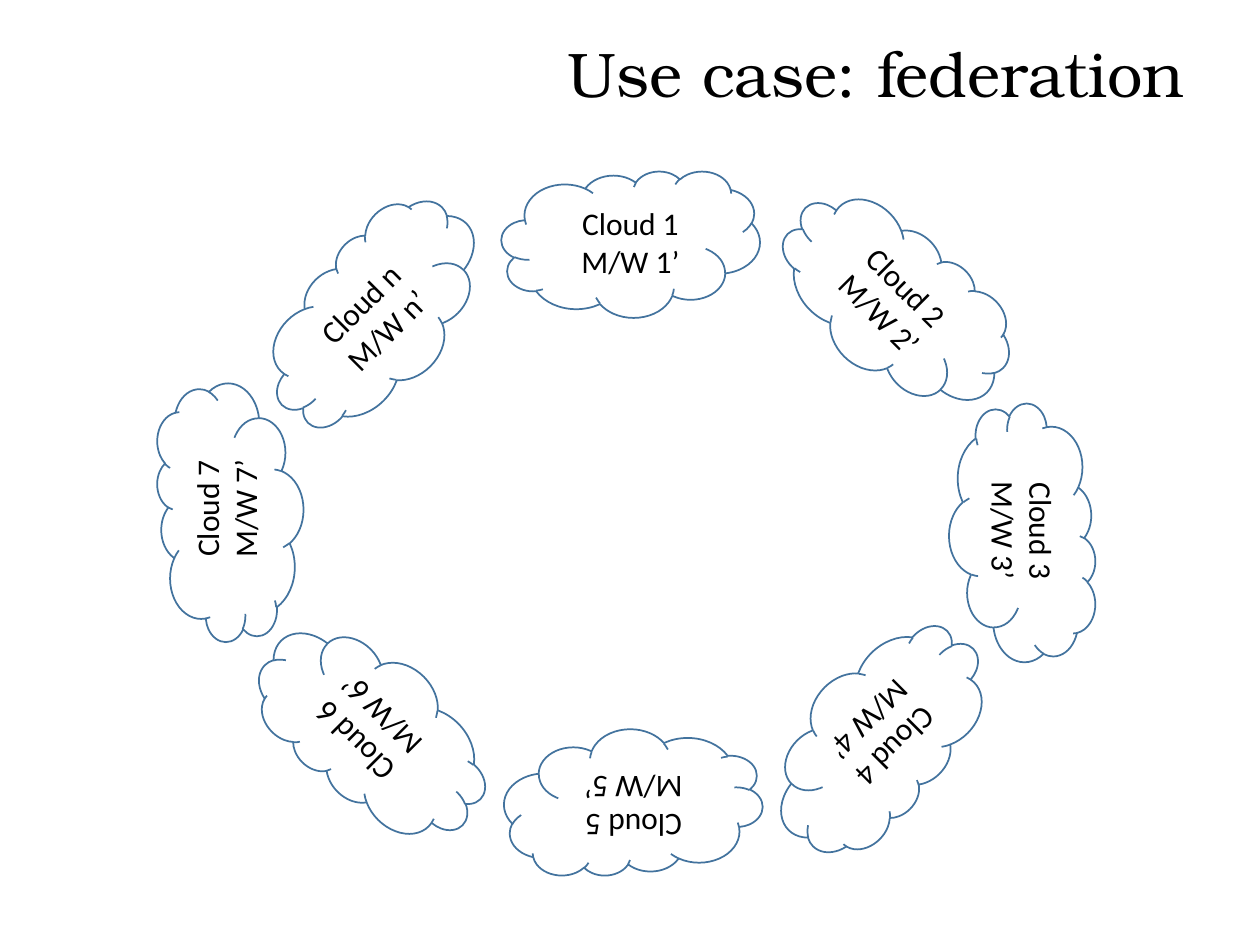
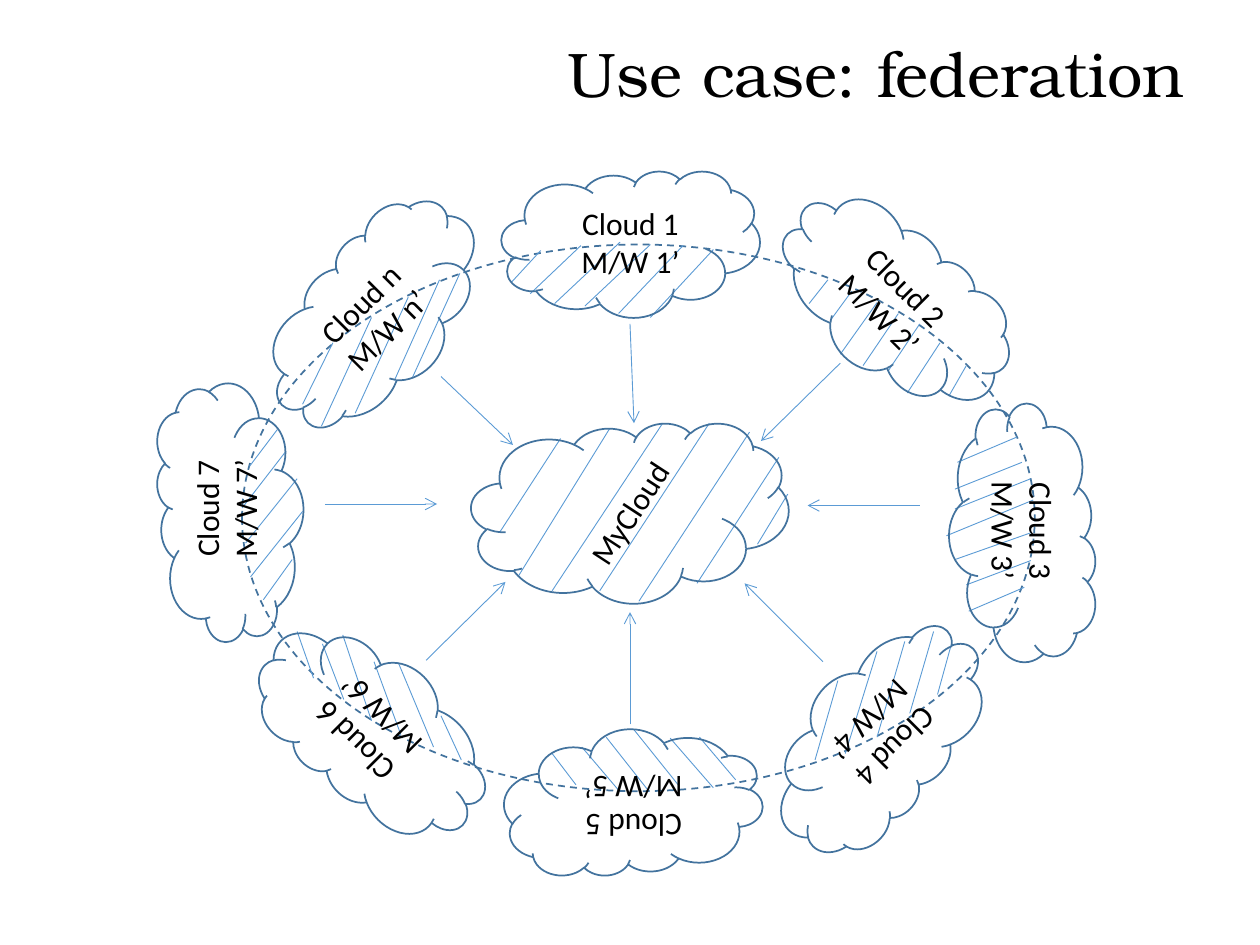
import pptx
import pptx.dml.color
import pptx.enum.dml
import pptx.enum.shapes
import pptx.enum.text
import pptx.oxml.ns
import pptx.util
from lxml import etree
from pptx.util import Cm

INK = "000000"
OUTLINE = "43739E"
HATCH = "5B9BD5"
SHAPES = pptx.enum.shapes.MSO_SHAPE
ALIGN = pptx.enum.text.PP_ALIGN

# Ring of clouds, clockwise from the top, each turned 45 degrees further:
# number, cloud left and top, label left and top
RING = [
    ("1", 10.11, 3.45, 11.4, 3.99),
    ("2", 15.42, 4.62, 16.69, 5.16),
    ("3", 18.01, 9.27, 19.3, 9.8),
    ("4", 15.11, 13.39, 16.48, 13.89),
    ("5", 10.16, 14.71, 11.46, 15.37),
    ("6", 4.93, 13.26, 6.1, 13.79),
    ("7", 2.03, 8.86, 3.25, 9.35),
    ("n", 4.98, 4.9, 6.22, 5.49),
]
# Each cloud: text, cloud box, cloud turn, label box, label turn
ring_clouds = [
    (f"Cloud {number}\nM/W {number}’", (left, top, 5.21, 2.95), 45 * step,
     (label_left, label_top, 2.62, 1.8), 45 * step)
    for step, (number, left, top, label_left, label_top) in enumerate(RING)
]
my_cloud = ("MyCloud", (9.5, 8.53, 6.4, 3.63), 0, (11.23, 9.83, 2.9, 1.02), 303.1)

# Hatching of the shared part of each cloud: start x, y, end x, y
HATCHES = {
    "1": [(10.69, 5.92, 11.71, 4.95), (10.31, 5.69, 10.9, 5.05),
          (11.18, 6.12, 12.5, 4.88), (11.79, 6.17, 13.11, 4.93),
          (12.47, 6.32, 13.77, 4.95), (13.11, 6.4, 14.38, 5.03)],
    "2": [(16.31, 6.12, 16.69, 5.64), (16.76, 6.43, 17.17, 5.87),
          (16.94, 7.14, 17.68, 6.1), (17.4, 7.37, 18.11, 6.32),
          (17.91, 7.47, 18.54, 6.53), (18.29, 7.92, 18.95, 6.91),
          (19.13, 7.98, 19.48, 7.37)],
    "3": [(19.3, 9.32, 20.5, 8.81), (19.25, 9.86, 20.6, 9.32),
          (19.25, 10.26, 20.78, 9.65), (19.08, 10.8, 20.83, 10.08),
          (19.25, 11.28, 20.78, 10.74), (19.48, 11.79, 20.78, 11.3),
          (19.53, 12.32, 20.65, 11.84)],
    "4": [(16.43, 15.32, 16.89, 13.72), (17.04, 15.19, 17.68, 13.13),
          (17.68, 14.86, 18.24, 12.93), (18.34, 14.38, 18.82, 12.73),
          (18.9, 14, 19.18, 12.98)],
    "5": [(14.83, 15.72, 14.1, 14.86), (14.38, 15.88, 13.51, 14.88),
          (13.67, 15.82, 12.78, 14.71), (13.08, 15.95, 12.22, 14.86),
          (12.47, 15.93, 11.73, 15.06), (11.61, 15.82, 11.13, 15.19)],
    "6": [(9.3, 15.32, 8.89, 14.43), (8.74, 15.06, 8.03, 13.36),
          (8.08, 14.81, 7.54, 13.34), (7.49, 14.53, 6.91, 12.8),
          (6.93, 14.1, 6.5, 12.98), (6.32, 13.67, 5.99, 12.73)],
    "7": [(5.31, 12.09, 5.89, 11.28), (5.05, 11.63, 6.1, 10.31),
          (4.95, 10.95, 5.99, 9.65), (4.88, 10.24, 5.77, 9.09),
          (5.03, 9.4, 5.59, 8.66)],
    "n": [(6.1, 8.15, 6.71, 6.91), (6.48, 8.59, 7.49, 6.4),
          (7.16, 8.33, 8.23, 5.99), (7.95, 7.67, 8.86, 5.64),
          (8.31, 7.62, 9.27, 5.51)],
    "MyCloud": [(10.08, 10.72, 11.3, 8.84), (10.44, 11.63, 12.29, 8.64),
                (11.13, 11.91, 13.36, 8.53), (12.09, 11.91, 14.3, 8.53),
                (12.88, 12.12, 15.11, 8.71), (14.05, 11.76, 15.7, 9.22),
                (15.27, 10.97, 15.88, 9.96)],
}
# Arrows from the ring to the centre, clockwise from the top
ARROWS = [
    (12.7, 6.53, 12.78, 8.53), (16.94, 7.32, 15.34, 8.89),
    (18.54, 10.19, 16.28, 10.19), (16.59, 13.34, 15.01, 11.76),
    (12.7, 14.6, 12.7, 12.34), (8.59, 13.31, 10.19, 11.73),
    (6.55, 10.16, 8.81, 10.16), (8.89, 7.59, 10.34, 8.97),
]


def paint(color_format, colour):
    color_format.rgb = pptx.dml.color.RGBColor.from_string(colour)


def write(frame, text, font, size, align):
    frame.text = text
    for para in frame.paragraphs:
        para.alignment = align
        for span in para.runs:
            span.font.name = font
            span.font.size = pptx.util.Pt(size)
            paint(span.font.color, INK)


deck = pptx.Presentation()
deck.slide_width, deck.slide_height = Cm(25.4), Cm(19.05)

for is_joined in (False, True):
    page = deck.slides.add_slide(deck.slide_layouts[5])

    # Title
    title = page.shapes.title
    title.left, title.top, title.width, title.height = Cm(5.89), Cm(0.18), Cm(18.24), Cm(2.74)
    title.text_frame.auto_size = pptx.enum.text.MSO_AUTO_SIZE.NONE
    title.text_frame.vertical_anchor = pptx.enum.text.MSO_ANCHOR.MIDDLE
    write(title.text_frame, "Use case: federation", "TeX Gyre Bonum", 36, ALIGN.RIGHT)
    title.text_frame.paragraphs[0].line_spacing = 0.9

    # Outlines: dashed ring and clouds; hatching lies between them
    outlines = []
    lines = []
    clouds = list(ring_clouds)
    if is_joined:
        ellipse = page.shapes.add_shape(SHAPES.OVAL, Cm(4.88), Cm(4.93), Cm(15.98), Cm(11.02))
        ellipse.line.dash_style = pptx.enum.dml.MSO_LINE.DASH
        outlines.append(ellipse)
        lines = [(ends, False) for group in HATCHES.values() for ends in group]
        lines += [(ends, True) for ends in ARROWS]
        clouds.append(my_cloud)

    # Hatching and arrows
    for ends, has_head in lines:
        line = page.shapes.add_connector(
            pptx.enum.shapes.MSO_CONNECTOR.STRAIGHT, *[Cm(value) for value in ends])
        line.line.width = pptx.util.Pt(0.5)
        paint(line.line.color, HATCH)
        if has_head:
            head = etree.SubElement(line.line._get_or_add_ln(), pptx.oxml.ns.qn("a:tailEnd"))
            head.set("type", "arrow")
        etree.SubElement(line._element.spPr, pptx.oxml.ns.qn("a:effectLst"))

    # Clouds and their labels
    for text, cloud_box, cloud_turn, label_box, label_turn in clouds:
        cloud = page.shapes.add_shape(SHAPES.CLOUD, *[Cm(value) for value in cloud_box])
        cloud.rotation = cloud_turn
        outlines.append(cloud)
        label = page.shapes.add_textbox(*[Cm(value) for value in label_box])
        label.rotation = label_turn
        label.text_frame.word_wrap = False
        label.text_frame.auto_size = pptx.enum.text.MSO_AUTO_SIZE.SHAPE_TO_FIT_TEXT
        write(label.text_frame, text, "Calibri", 18, ALIGN.CENTER)

    for shape in outlines:
        shape.shadow.inherit = False
        shape.fill.background()
        shape.line.width = pptx.util.Pt(1)
        paint(shape.line.color, OUTLINE)

deck.save("out.pptx")
